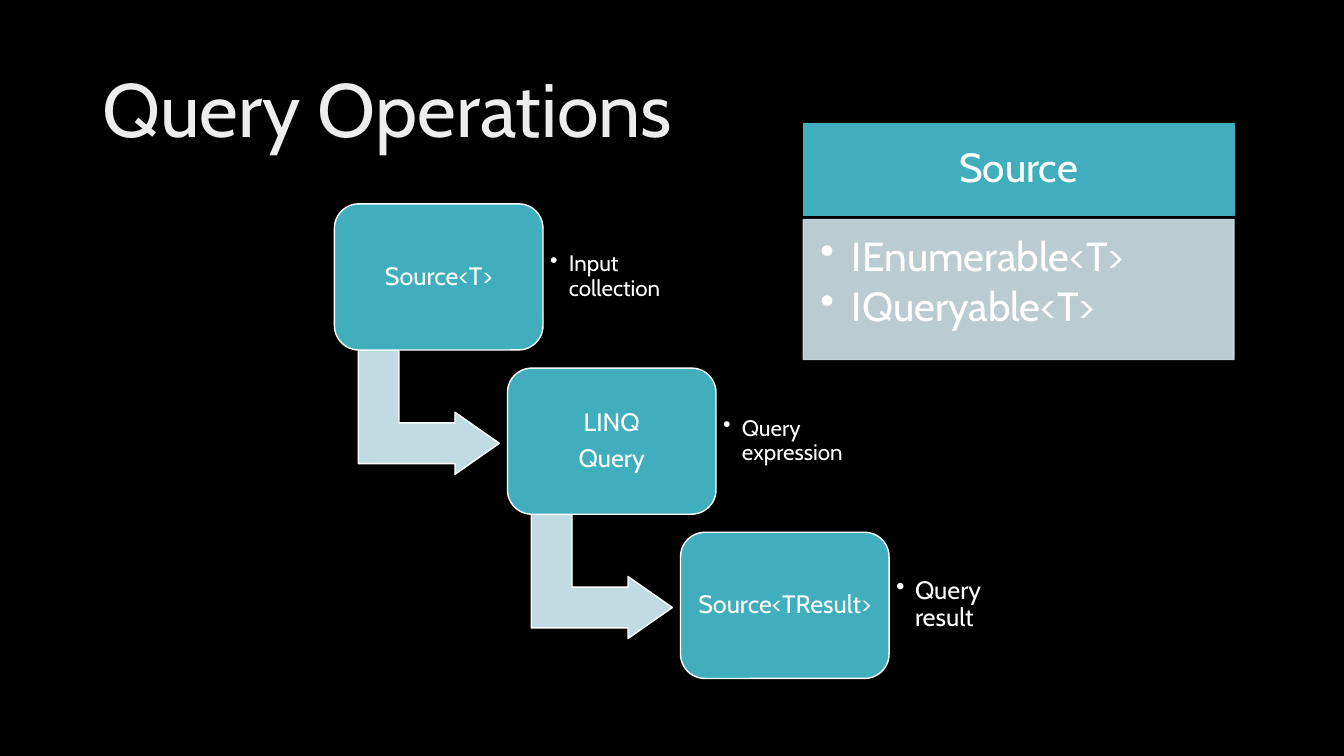
from pptx import Presentation
from pptx.dml.color import RGBColor
from pptx.enum.shapes import MSO_SHAPE
from pptx.enum.text import MSO_ANCHOR, MSO_AUTO_SIZE, PP_ALIGN
from pptx.oxml import parse_xml
from pptx.oxml.ns import nsdecls, qn
from pptx.util import Pt
from lxml.etree import SubElement

HUES = {"back": "000000", "text": "FFFFFF", "teal": "41AEBD",
        "arrow": "C0DBE1", "pale": "CFE3E8"}
FADE = [(0, "BFBFBF"), (28, "EDEDED"), (100, "FFFFFF")]
STEPS = [(["Source<T>"], "Input collection", 16),
         (["LINQ", "Query"], "Query expression", 16),
         (["Source<TResult>"], "Query result", 18)]


def write(frame, lines, size, align=PP_ALIGN.LEFT, anchor=MSO_ANCHOR.MIDDLE,
          pad=(5, 5, 5, 5), after=0, indent=0, font="Cabin", color="text"):
    frame.word_wrap = True
    frame.auto_size = MSO_AUTO_SIZE.NONE
    frame.vertical_anchor = anchor
    (frame.margin_left, frame.margin_top,
     frame.margin_right, frame.margin_bottom) = map(Pt, pad)
    for num, line in enumerate(lines):
        para = frame.add_paragraph() if num else frame.paragraphs[0]
        para.alignment = align
        para.line_spacing = 0.9
        para.space_before = Pt(0)
        para.space_after = Pt(after)
        if indent:
            prop = para._p.get_or_add_pPr()
            prop.set("marL", str(Pt(indent)))
            prop.set("indent", str(-Pt(indent)))
            SubElement(prop, qn("a:buChar")).set("char", "•")
        run = para.add_run()
        run.text = line
        run.font.name = font
        run.font.size = Pt(size)
        run.font.color.rgb = RGBColor.from_string(HUES[color])


class Deck:
    def __init__(self):
        self.show = Presentation()
        self.show.slide_width = Pt(960)
        self.show.slide_height = Pt(540)
        self.slide = self.show.slides.add_slide(self.show.slide_layouts[5])
        fill = self.slide.background.fill
        fill.solid()
        fill.fore_color.rgb = RGBColor.from_string(HUES["back"])

    def title(self, text, x, y, w, h):
        box = self.slide.shapes.title
        box.left, box.top, box.width, box.height = map(Pt, (x, y, w, h))
        write(box.text_frame, [text], 54, pad=(7.2, 3.6, 7.2, 3.6))
        prop = box.text_frame.paragraphs[0].runs[0].font._element
        stops = "".join(f'<a:gs pos="{pos * 1000}"><a:srgbClr val="{hue}"/></a:gs>'
                        for pos, hue in FADE)
        fade = parse_xml(f'<a:gradFill {nsdecls("a")}><a:gsLst>{stops}</a:gsLst>'
                         '<a:lin ang="4800000" scaled="0"/></a:gradFill>')
        prop.replace(prop.find(qn("a:solidFill")), fade)

    def shape(self, kind, x, y, w, h, fill, line="text", adjust=(), turn=0, alpha=100):
        item = self.slide.shapes.add_shape(kind, *map(Pt, (x, y, w, h)))
        item.shadow.inherit = False
        item.rotation = turn
        for num, value in enumerate(adjust):
            item.adjustments[num] = value
        item.fill.solid()
        item.fill.fore_color.rgb = RGBColor.from_string(HUES[fill])
        item.line.color.rgb = RGBColor.from_string(HUES[line])
        item.line.width = Pt(1)
        if alpha < 100:
            for hue in item._element.spPr.iter(qn("a:srgbClr")):
                SubElement(hue, qn("a:alpha")).set("val", str(alpha * 1000))
        return item.text_frame

    def label(self, lines, x, y, w, h, size, **style):
        box = self.slide.shapes.add_textbox(*map(Pt, (x, y, w, h)))
        write(box.text_frame, lines, size, **style)


def main():
    deck = Deck()
    deck.title("Query Operations", 66, 28.8, 828, 104.4)

    for num, (names, note, size) in enumerate(STEPS):
        x, y = 238.9 + 123.6 * num, 145.6 + 117.3 * num
        if num < len(STEPS) - 1:
            deck.shape(MSO_SHAPE.BENT_UP_ARROW, x + 23.1, y + 98.5, 88.6, 100.8,
                       "arrow", adjust=(0.328, 0.25, 0.358), turn=90)
        frame = deck.shape(MSO_SHAPE.ROUNDED_RECTANGLE, x, y, 149, 104.4,
                           "teal", adjust=(0.167,))
        write(frame, names, 18, align=PP_ALIGN.CENTER, after=6.3)
        deck.label([note], x + 149, y + 10, 108.7, 84.2, size,
                   after=0.15 * size, indent=13.5)

    x, w = 573.8, 307.6
    head = deck.shape(MSO_SHAPE.RECTANGLE, x, 88.4, w, 65.5, "teal", "teal")
    write(head, ["Source"], 29, align=PP_ALIGN.CENTER,
          pad=(16.5, 9.4, 16.5, 9.4), after=10.15)
    body = deck.shape(MSO_SHAPE.RECTANGLE, x, 156.8, w, 100, "pale", "pale", alpha=90)
    write(body, ["IEnumerable<T>", "IQueryable<T>"], 29, anchor=MSO_ANCHOR.TOP,
          pad=(12.2, 12.2, 16.5, 18), after=4.35, indent=22.5)
    deck.show.save("out.pptx")


if __name__ == "__main__":
    main()
